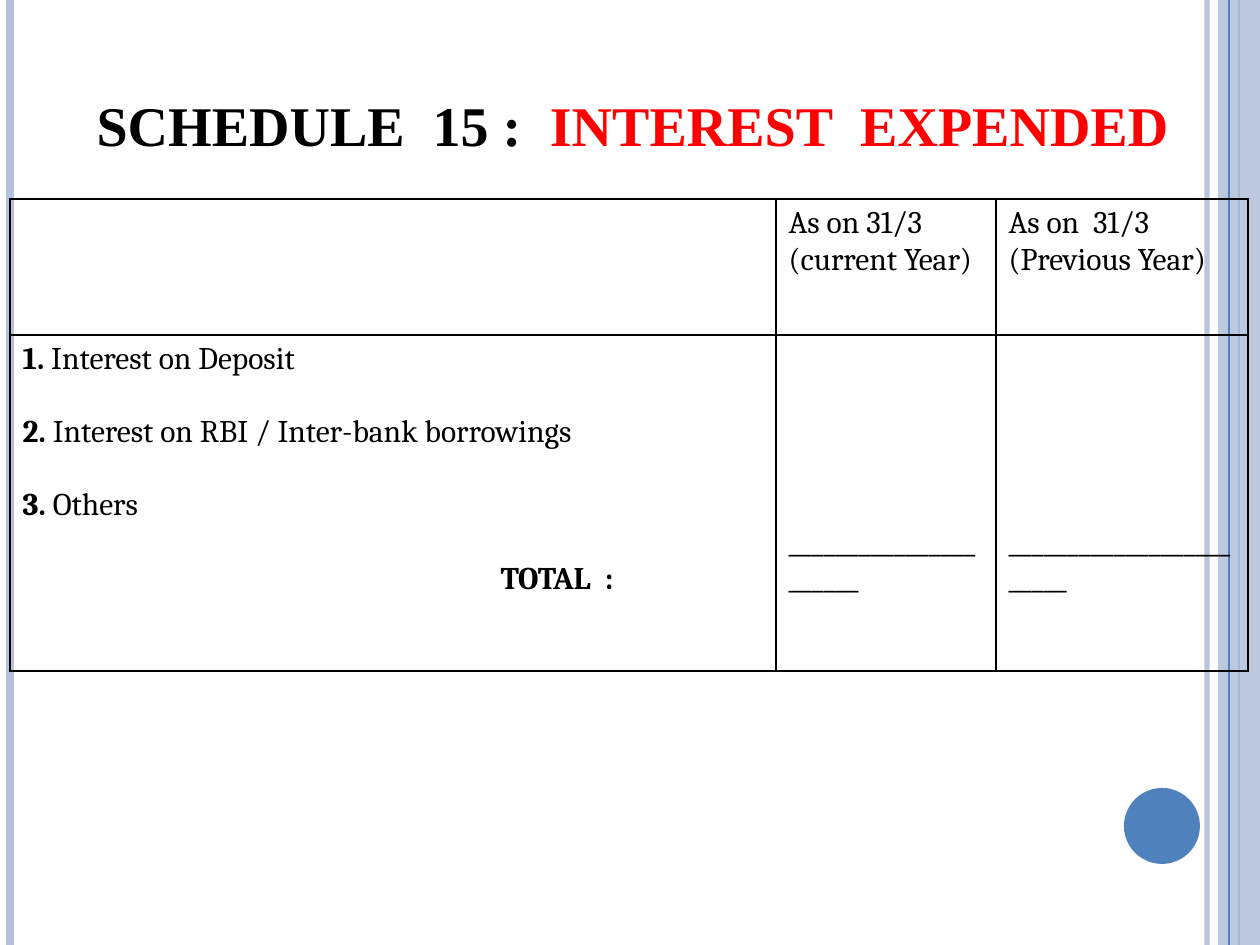
"""Build the slide on Schedule 15, interest expended."""
import pptx
import pptx.dml.color
import pptx.enum.shapes
import pptx.enum.text
import pptx.oxml
import pptx.oxml.ns
import pptx.util

PX = 914400 / 126
WIDTH, HEIGHT = 1260, 945
BLACK, RED, BLUE, PALE = "000000", "FF0000", "4F81BD", "B3C1DB"
LINE_PITCH = 21


def px(length):
    """Turn pixels into EMU."""
    return pptx.util.Emu(round(length * PX))


def color(value):
    """Turn a hex string into a colour."""
    return pptx.dml.color.RGBColor.from_string(value)


def element(xml):
    """Parse a DrawingML fragment whose root declares the a prefix."""
    return pptx.oxml.parse_xml(xml.replace(" ", f" {pptx.oxml.ns.nsdecls('a')} ", 1))


def set_opacity(properties, percent):
    """Make the solid colour under the properties partly transparent."""
    for node in properties.iter(pptx.oxml.ns.qn("a:srgbClr")):
        node.append(element(f'<a:alpha val="{percent * 1000}"/>'))


def add_stripe(slide, x, width, value, opacity=100):
    """Draw a line down the full height of the slide."""
    stripe = slide.shapes.add_connector(
        pptx.enum.shapes.MSO_CONNECTOR.STRAIGHT, px(x), 0, px(x), px(HEIGHT))
    stripe.line.width = pptx.util.Pt(width)
    stripe.line.color.rgb = color(value)
    properties = stripe._element.spPr
    if opacity < 100:
        set_opacity(properties, opacity)
    properties.append(element("<a:effectLst />"))


def add_plain_shape(slide, kind, box, value, opacity=100):
    """Draw a filled shape without outline."""
    shape = slide.shapes.add_shape(kind, *map(px, box))
    shape.shadow.inherit = False
    shape.fill.solid()
    shape.fill.fore_color.rgb = color(value)
    shape.line.fill.background()
    if opacity < 100:
        set_opacity(shape._element.spPr, opacity)


def add_run(paragraph, text, size, font, value=BLACK, bold=False):
    """Add one formatted run."""
    run = paragraph.add_run()
    run.text = text
    run.font.size = pptx.util.Pt(size)
    run.font.name = font
    run.font.bold = bold
    run.font.color.rgb = color(value)


def set_title(slide, box, parts):
    """Place the title and fill it with coloured parts."""
    title = slide.shapes.title
    title.left, title.top, title.width, title.height = map(px, box)
    frame = title.text_frame
    frame.word_wrap = False
    frame.auto_size = pptx.enum.text.MSO_AUTO_SIZE.SHAPE_TO_FIT_TEXT
    frame.vertical_anchor = pptx.enum.text.MSO_ANCHOR.TOP
    paragraph = frame.paragraphs[0]
    paragraph.alignment = pptx.enum.text.PP_ALIGN.LEFT
    for text, value in parts:
        add_run(paragraph, text, 32, "Times New Roman", value, True)


def format_cell(cell):
    """Give a cell black borders and no fill."""
    properties = cell._tc.get_or_add_tcPr()
    for side in "LRTB":
        properties.append(element(
            f'<a:ln{side} w="12700"><a:solidFill><a:srgbClr val="{BLACK}"/>'
            f"</a:solidFill></a:ln{side}>"))
    cell.fill.background()


def write_cell(cell, lines, space_after=0):
    """Write lines, each a list of (text, bold) runs, into a cell."""
    frame = cell.text_frame
    for index, runs in enumerate(lines):
        paragraph = frame.add_paragraph() if index else frame.paragraphs[0]
        paragraph.space_after = pptx.util.Pt(space_after)
        for text, bold in runs:
            add_run(paragraph, text, 18, "Cambria", BLACK, bold)


def add_schedule(slide):
    """Add the table of interest items for two years."""
    columns, rows = [766, 220, 252], [136, 336]
    table = slide.shapes.add_table(
        len(rows), len(columns), px(10), px(199), px(sum(columns)), px(sum(rows))).table
    table.first_row = table.horz_banding = False
    for column, width in zip(table.columns, columns):
        column.width = px(width)
    for row, height in zip(table.rows, rows):
        row.height = px(height)
    for cell in table.iter_cells():
        format_cell(cell)

    years = [("As on 31/3", "(current Year)"), ("As on  31/3", "(Previous Year)")]
    for index, (lines, count) in enumerate(zip(years, (22, 24)), 1):
        write_cell(table.cell(0, index), [[(line, False)] for line in lines])
        total = table.cell(1, index)
        total.margin_top = px(6) + pptx.util.Pt(5 * LINE_PITCH)
        write_cell(total, [[("_" * count, False)]])

    items = ["Interest on Deposit", "Interest on RBI / Inter-bank borrowings", "Others"]
    lines = [[(f"{number}. ", True), (item, False)] for number, item in enumerate(items, 1)]
    names = table.cell(1, 0)
    write_cell(names, lines + [[("TOTAL  :", True)]], LINE_PITCH)
    names.text_frame.paragraphs[-1]._p.get_or_add_pPr().set("marL", str(px(478)))


def main():
    """Build and save the slide."""
    presentation = pptx.Presentation()
    presentation.slide_width, presentation.slide_height = px(WIDTH), px(HEIGHT)
    slide = presentation.slides.add_slide(presentation.slide_layouts[5])
    kinds = pptx.enum.shapes.MSO_SHAPE
    add_stripe(slide, 1207, 3, PALE, 93)
    add_stripe(slide, 10, 4.5, PALE)
    add_stripe(slide, 1239, 1.5, BLUE)
    add_plain_shape(slide, kinds.RECTANGLE, (1218, 0, 42, HEIGHT), PALE, 87)
    add_stripe(slide, 1229, 0.75, BLUE)
    add_plain_shape(slide, kinds.OVAL, (1124, 788, 76, 76), BLUE)
    add_schedule(slide)
    set_title(slide, (84, 84, 1101, 81),
              [("SCHEDULE  15 :  ", BLACK), ("INTEREST  EXPENDED", RED)])
    presentation.save("out.pptx")


if __name__ == "__main__":
    main()
